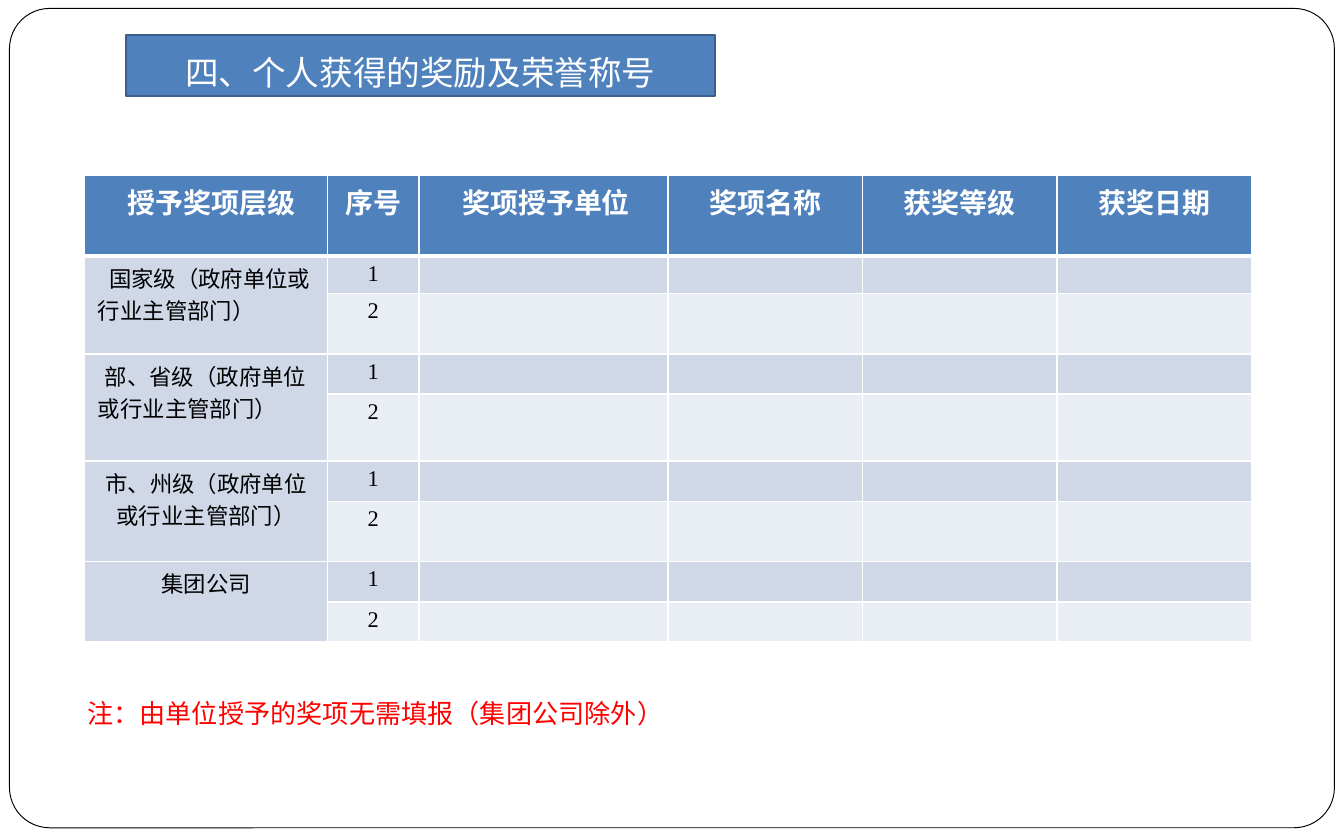
from lxml import etree
from pptx import Presentation
from pptx.dml.color import RGBColor
from pptx.enum.shapes import MSO_SHAPE
from pptx.enum.text import MSO_ANCHOR, MSO_AUTO_SIZE, PP_ALIGN
from pptx.oxml.ns import qn
from pptx.util import Cm, Pt

LEFT, CENTER = PP_ALIGN.LEFT, PP_ALIGN.CENTER
TITLE_ONLY_LAYOUT = 5
FONT = "Times New Roman"
COLORS = {
    "white": "FFFFFF", "black": "000000", "blue": "4F81BD",
    "outline": "3A5F8C", "band_dark": "D0D8E8", "band_light": "E9EDF4",
    "red": "FF0000",
}

# Content
TITLE = "四、个人获得的奖励及荣誉称号"
NOTE = "注：由单位授予的奖项无需填报（集团公司除外）"
# heading, column width in cm, extra left inset in cm
COLUMNS = [
    ("授予奖项层级", 4.59, 0.22),
    ("序号", 1.73, 0),
    ("奖项授予单位", 4.7, 0.1),
    ("奖项名称", 3.68, 0),
    ("获奖等级", 3.68, 0),
    ("获奖日期", 3.68, 0),
]
# award level, alignment, first-line indent in cm, heights of rows 1 and 2 in cm
LEVELS = [
    ("国家级（政府单位或行业主管部门）", LEFT, 0.21, (0.71, 1.14)),
    ("部、省级（政府单位或行业主管部门）", LEFT, 0.13, (0.76, 1.27)),
    ("市、州级（政府单位或行业主管部门）", CENTER, 0, (0.76, 1.14)),
    ("集团公司", CENTER, 0, (0.76, 0.76)),
]
HEADER_HEIGHT = 1.52


def color(name):
    return RGBColor.from_string(COLORS[name])


def paint(shape, fill, line, width):
    shape.fill.solid()
    shape.fill.fore_color.rgb = color(fill)
    shape.line.color.rgb = color(line)
    shape.line.width = Pt(width)


def write(text_frame, text, size, color_name, alignment=LEFT, bold=False):
    text_frame.text = text
    paragraph = text_frame.paragraphs[0]
    paragraph.alignment = alignment
    # Paragraph-level font also sizes empty cells
    for font in [paragraph.font] + [run.font for run in paragraph.runs]:
        font.name, font.size, font.bold = FONT, Pt(size), bold
        font.color.rgb = color(color_name)
    return paragraph


def set_borders(cell, top, bottom):
    properties = cell._tc.get_or_add_tcPr()
    widths = {"lnL": 1, "lnR": 1, "lnT": top, "lnB": bottom}
    for index, (tag, width) in enumerate(widths.items()):
        line = etree.Element(qn("a:" + tag), w=str(Pt(width)))
        fill = etree.SubElement(line, qn("a:solidFill"))
        etree.SubElement(fill, qn("a:srgbClr"), val=COLORS["white"])
        properties.insert(index, line)


def format_cell(cell, fill, top=1, bottom=1):
    cell.fill.solid()
    cell.fill.fore_color.rgb = color(fill)
    cell.margin_left = cell.margin_right = Cm(0.25)
    cell.margin_top = cell.margin_bottom = Cm(0.1)
    set_borders(cell, top, bottom)


presentation = Presentation()
presentation.slide_width, presentation.slide_height = Cm(25.4), Cm(15.88)
slide = presentation.slides.add_slide(presentation.slide_layouts[TITLE_ONLY_LAYOUT])
shapes = slide.shapes

# Rounded frame, sent to the back
frame = shapes.add_shape(MSO_SHAPE.ROUNDED_RECTANGLE,
                         Cm(0.18), Cm(0.16), Cm(25.04), Cm(15.49))
frame.adjustments[0] = 0.049
frame.shadow.inherit = False
paint(frame, "white", "black", 0.5)
shapes._spTree.insert(2, frame._element)

# Title in a pentagon arrow
title = shapes.title
title.left, title.top, title.width, title.height = Cm(2.38), Cm(0.66), Cm(11.13), Cm(1.16)
geometry = etree.SubElement(title._element.spPr, qn("a:prstGeom"), prst="homePlate")
etree.SubElement(geometry, qn("a:avLst"))
paint(title, "blue", "outline", 1)
title_frame = title.text_frame
title_frame.auto_size = MSO_AUTO_SIZE.NONE
title_frame.vertical_anchor = MSO_ANCHOR.MIDDLE
title_frame.margin_top, title_frame.margin_bottom = Cm(0.25), Cm(0)
write(title_frame, TITLE, 18, "white", CENTER)

# Awards table
row_heights = [HEADER_HEIGHT] + [height for level in LEVELS for height in level[3]]
table = shapes.add_table(
    len(row_heights), len(COLUMNS), Cm(1.6), Cm(3.32),
    Cm(sum(column[1] for column in COLUMNS)), Cm(sum(row_heights))).table
for row, height in zip(table.rows, row_heights):
    row.height = Cm(height)

for index, (heading, width, inset) in enumerate(COLUMNS):
    table.columns[index].width = Cm(width)
    cell = table.cell(0, index)
    format_cell(cell, "blue", bottom=3)
    cell.margin_left = Cm(0.25 + inset)
    write(cell.text_frame, heading, 15, "white", CENTER, bold=True)

for level_index, (level, alignment, indent, _) in enumerate(LEVELS):
    first_row = 1 + 2 * level_index
    for offset, fill in enumerate(("band_dark", "band_light")):
        row_index = first_row + offset
        for column_index in range(len(COLUMNS)):
            cell = table.cell(row_index, column_index)
            format_cell(cell, fill, top=3 if row_index == 1 else 1)
            text = str(offset + 1) if column_index == 1 else ""
            write(cell.text_frame, text, 12, "black", CENTER)
    level_cell = table.cell(first_row, 0)
    level_cell.merge(table.cell(first_row + 1, 0))
    paragraph = write(level_cell.text_frame, level, 12, "black", alignment)
    paragraph._p.get_or_add_pPr().set("indent", str(Cm(indent)))

# Note below the table
note = shapes.add_textbox(Cm(1.4), Cm(13.06), Cm(21.44), Cm(0.86))
note.text_frame.word_wrap = True
write(note.text_frame, NOTE, 14, "red")

presentation.save("out.pptx")
